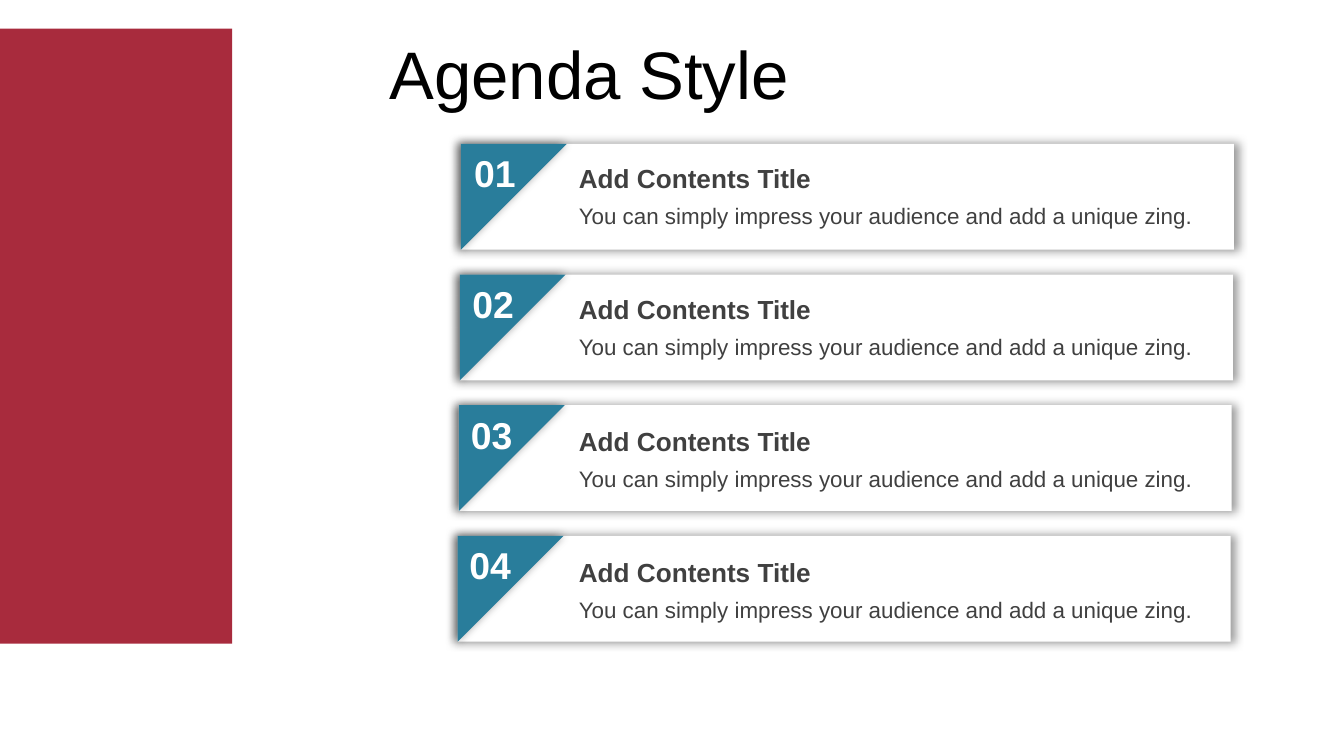
from lxml import etree
from pptx import Presentation
from pptx.dml.color import RGBColor
from pptx.enum.shapes import MSO_SHAPE
from pptx.enum.text import MSO_ANCHOR, MSO_AUTO_SIZE
from pptx.oxml import parse_xml
from pptx.oxml.ns import nsdecls, qn
from pptx.util import Cm, Pt

RECTANGLE = MSO_SHAPE.RECTANGLE
RIGHT_TRIANGLE = MSO_SHAPE.RIGHT_TRIANGLE
MIDDLE = MSO_ANCHOR.MIDDLE
TOP = MSO_ANCHOR.TOP
GROW = MSO_AUTO_SIZE.SHAPE_TO_FIT_TEXT

FONT = "Arial"
COLORS = {
    "band": "A82B3D",
    "corner": "297D9B",
    "card": "FFFFFF",
    "heading": "000000",
    "number": "FFFFFF",
    "body": "404040",
    "shadow": "000000",
}
ITEMS = [
    (number, "Add Contents Title", "You can simply impress your audience and add a unique zing.")
    for number in ("01", "02", "03", "04")
]


def add_block(shapes, preset, box, color):
    block = shapes.add_shape(preset, *(Cm(length) for length in box))
    block.fill.solid()
    block.fill.fore_color.rgb = RGBColor.from_string(COLORS[color])
    block.line.fill.background()
    block.shadow.inherit = False
    return block


def add_glow_shadow(block):
    effects = block._element.spPr.find(qn("a:effectLst"))
    effects.append(parse_xml(
        f'<a:outerShdw {nsdecls("a")} blurRad="{Pt(5)}" sx="101000" sy="101000" '
        f'algn="ctr" rotWithShape="0"><a:srgbClr val="{COLORS["shadow"]}">'
        '<a:alpha val="40000"/></a:srgbClr></a:outerShdw>'
    ))


def add_label(shapes, box, text, size, color, bold=False, anchor=TOP):
    label = shapes.add_textbox(*(Cm(length) for length in box))
    frame = label.text_frame
    frame.word_wrap = True
    frame.vertical_anchor = anchor
    frame.text = text
    font = frame.paragraphs[0].runs[0].font
    font.name = FONT
    font.size = Pt(size)
    font.bold = bold
    font.color.rgb = RGBColor.from_string(COLORS[color])
    return label


def add_card(slide, left, top, width, height):
    card = slide.shapes.add_group_shape().shapes
    panel = add_block(card, RECTANGLE, (left, top, width, height), "card")
    corner = add_block(card, RIGHT_TRIANGLE, (left, top, height, height), "corner")
    corner.rotation = 90
    add_glow_shadow(panel)
    add_glow_shadow(corner)


def add_number(slide, left, top, number):
    label = add_label(slide.shapes, (left, top, 1.47, 1.12), number, 20, "number", True)
    label.text_frame.auto_size = GROW


def add_contents(slide, left, top, width, title, description):
    contents = slide.shapes.add_group_shape().shapes
    heading = add_label(contents, (left, top, width, 0.86), title, 14, "body", True)
    detail = add_label(contents, (left, top + 0.75, width, 0.76), description, 12, "body")
    for label in (heading, detail):
        label.text_frame.auto_size = GROW


def add_agenda(slide, left, top, width, height):
    for row, (number, title, description) in enumerate(ITEMS):
        card_top = top + row * 2.47
        add_card(slide, left - row * 0.02, card_top, width, height)
        add_number(slide, left - row * 0.03, card_top, number)
        add_contents(slide, left + 1.98, top + 0.23 + row * 2.48, 12.19, title, description)


def main():
    deck = Presentation()
    deck.slide_width = Cm(25.4)
    deck.slide_height = Cm(14.29)
    slide = deck.slides.add_slide(deck.slide_layouts[6])
    add_block(slide.shapes, RECTANGLE, (0, 0.54, 4.39, 11.63), "band")
    add_label(slide.shapes, (7.11, 0.58, 18.29, 1.6), "Agenda Style", 36, "heading", anchor=MIDDLE)
    add_agenda(slide, 8.71, 2.72, 14.61, 2)
    deck.save("out.pptx")


if __name__ == "__main__":
    main()
